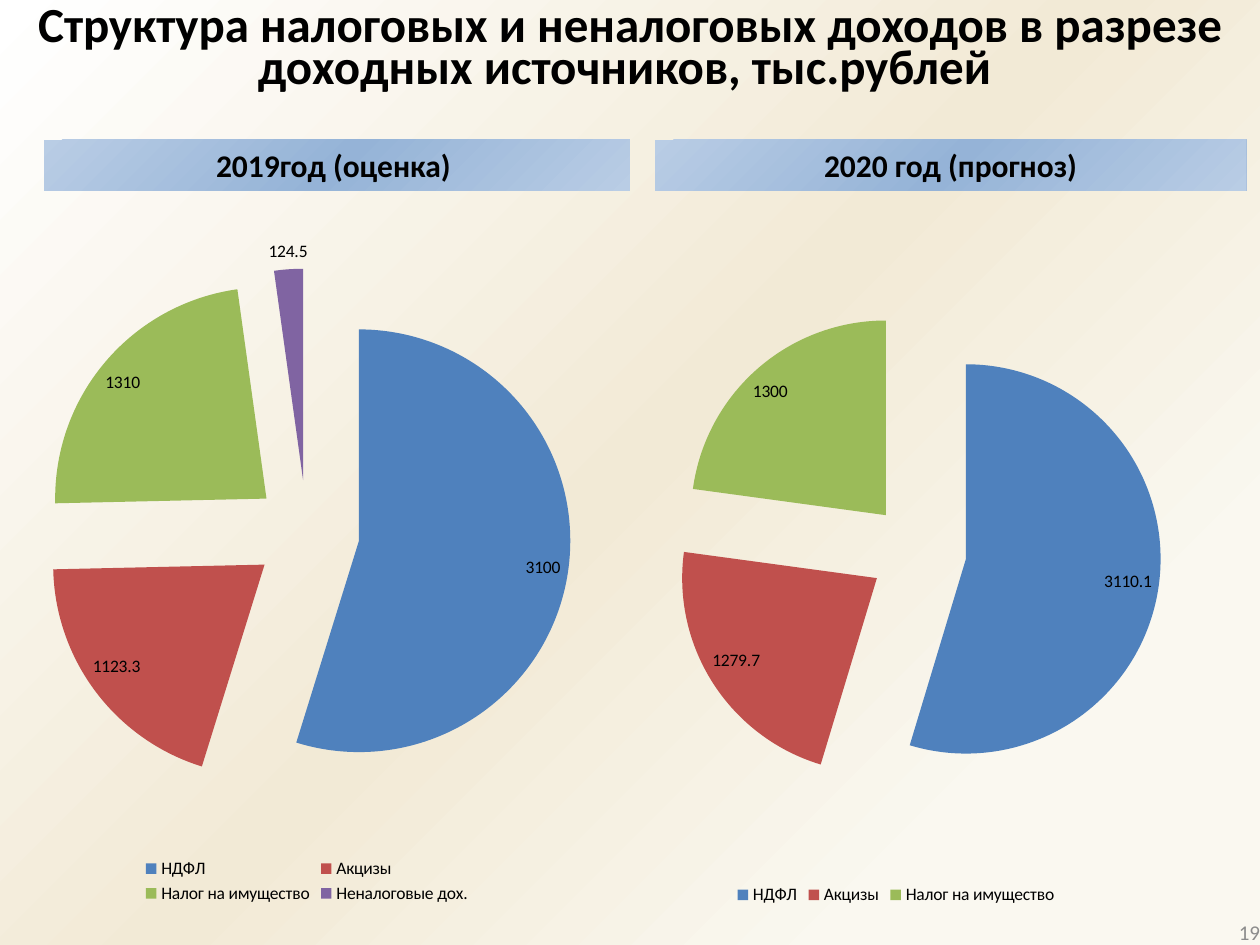
from lxml.etree import SubElement
from pptx import Presentation
from pptx.chart.data import CategoryChartData as ChartData
from pptx.dml.color import RGBColor as RGB
from pptx.enum.chart import XL_CHART_TYPE as ChartType
from pptx.enum.chart import XL_LABEL_POSITION as LabelPos
from pptx.enum.chart import XL_LEGEND_POSITION as LegendPos
from pptx.enum.shapes import MSO_SHAPE as Shape
from pptx.enum.text import MSO_ANCHOR as Anchor
from pptx.enum.text import MSO_AUTO_SIZE as AutoSize
from pptx.enum.text import PP_ALIGN as Align
from pptx.oxml import parse_xml
from pptx.oxml.ns import nsdecls, qn
from pptx.util import Pt

TITLE = "Структура налоговых и неналоговых доходов в разрезе доходных источников, тыс.рублей "
PAGE_NUMBER = "19"
SOURCES = ["НДФЛ", "Акцизы", "Налог на имущество", "Неналоговые дох."]
YEARS = [
    {
        "heading": "2019год (оценка) ",
        "heading_box": (25.2, 79.9, 334.8, 29.1),
        "income": [3100, 1123.3, 1310, 124.5],
        "pie_box": (14.4, 110.9, 321.8, 408.2),
        "plot": None,
    },
    {
        "heading": "2020 год (прогноз)",
        "heading_box": (374.4, 79.9, 337.7, 29.1),
        "income": [3110.1, 1279.7, 1300],
        "pie_box": (331.9, 110.9, 360, 409),
        "plot": {"x": 0.13, "y": 0.16, "w": 0.81, "h": 0.68},
    },
]
THEME = {
    "font": "Calibri",
    "text": "000000",
    "muted": "8C8C8C",
    "slices": ["4F81BD", "C0504D", "9BBB59", "8064A2"],
    "background": [(19, "FAF8F0"), (50, "F2EAD6"), (100, "FFFFFF")],
    "heading_fill": [(0, "B9CDE5"), (50, "95B3D7"), (100, "B9CDE5")],
    "title_size": 28,
    "heading_size": 18,
    "page_size": 12,
    "chart_size": 10,
}
EXPLOSION = 25


def points(box):
    return [Pt(length) for length in box]


def set_font(font, size, color=THEME["text"], bold=False):
    font.name = THEME["font"]
    font.size = Pt(size)
    font.bold = bold
    font.color.rgb = RGB.from_string(color)


def corner_gradient(fill, owner, stops):
    fill.gradient()
    old = next(owner.iter(qn("a:gradFill")))
    stop_xml = "".join(
        f'<a:gs pos="{percent * 1000}"><a:srgbClr val="{color}"/></a:gs>'
        for percent, color in stops
    )
    new = parse_xml(
        f'<a:gradFill {nsdecls("a")} rotWithShape="1"><a:gsLst>{stop_xml}</a:gsLst>'
        '<a:path path="circle"><a:fillToRect l="100000" t="100000"/></a:path>'
        "</a:gradFill>"
    )
    old.getparent().replace(old, new)


def write(holder, text, align, size, color=THEME["text"], bold=False):
    frame = holder.text_frame
    frame.word_wrap = True
    frame.text = text
    paragraph = frame.paragraphs[0]
    paragraph.alignment = align
    set_font(paragraph.runs[0].font, size, color, bold)
    return frame


def add_heading(slide, year):
    heading = slide.shapes.add_shape(Shape.RECTANGLE, *points(year["heading_box"]))
    heading.shadow.inherit = False
    heading.line.fill.background()
    corner_gradient(heading.fill, heading._element, THEME["heading_fill"])
    frame = write(heading, year["heading"], Align.CENTER, THEME["heading_size"], bold=True)
    frame.vertical_anchor = Anchor.TOP
    frame.auto_size = AutoSize.SHAPE_TO_FIT_TEXT


def place_plot(chart, plot):
    area = chart._chartSpace.chart.plotArea
    for old in area.findall(qn("c:layout")):
        area.remove(old)
    layout = parse_xml(f'<c:layout {nsdecls("c")}/>')
    manual = SubElement(layout, qn("c:manualLayout"))
    settings = {"layoutTarget": "inner", "xMode": "edge", "yMode": "edge", **plot}
    for tag, value in settings.items():
        SubElement(manual, qn(f"c:{tag}")).set("val", str(value))
    area.insert(0, layout)


def add_pie(slide, year):
    data = ChartData()
    data.categories = SOURCES[:len(year["income"])]
    data.add_series("Series 1", year["income"])
    chart = slide.shapes.add_chart(ChartType.PIE, *points(year["pie_box"]), data).chart
    set_font(chart.font, THEME["chart_size"])
    chart.has_title = False
    chart.has_legend = True
    chart.legend.position = LegendPos.BOTTOM
    chart.legend.include_in_layout = False

    pie = chart.plots[0]
    pie.vary_by_categories = True
    pie.has_data_labels = True
    pie.data_labels.show_value = True
    pie.data_labels.show_percentage = False
    pie.data_labels.position = LabelPos.BEST_FIT

    series = pie.series[0]
    explosion = parse_xml(f'<c:explosion {nsdecls("c")} val="{EXPLOSION}"/>')
    series._element.find(qn("c:tx")).addnext(explosion)
    for index, color in enumerate(THEME["slices"][:len(year["income"])]):
        fill = series.points[index].format.fill
        fill.solid()
        fill.fore_color.rgb = RGB.from_string(color)
    if year["plot"]:
        place_plot(chart, year["plot"])


def main():
    deck = Presentation()
    deck.slide_width, deck.slide_height = Pt(720), Pt(540)
    slide = deck.slides.add_slide(deck.slide_layouts[6])
    corner_gradient(slide.background.fill, slide._element, THEME["background"])

    title = slide.shapes.add_textbox(*points((0, 0, 720, 59)))
    frame = write(title, TITLE, Align.CENTER, THEME["title_size"], bold=True)
    frame.margin_top = Pt(5.8)
    frame.auto_size = AutoSize.SHAPE_TO_FIT_TEXT
    frame.paragraphs[0].line_spacing = Pt(24)

    for year in YEARS:
        add_heading(slide, year)
        add_pie(slide, year)

    page = slide.shapes.add_textbox(*points((552, 525, 168, 15)))
    frame = write(page, PAGE_NUMBER, Align.RIGHT, THEME["page_size"], THEME["muted"])
    frame.margin_left = frame.margin_right = frame.margin_top = frame.margin_bottom = 0
    frame.vertical_anchor = Anchor.MIDDLE

    deck.save("out.pptx")


if __name__ == "__main__":
    main()
